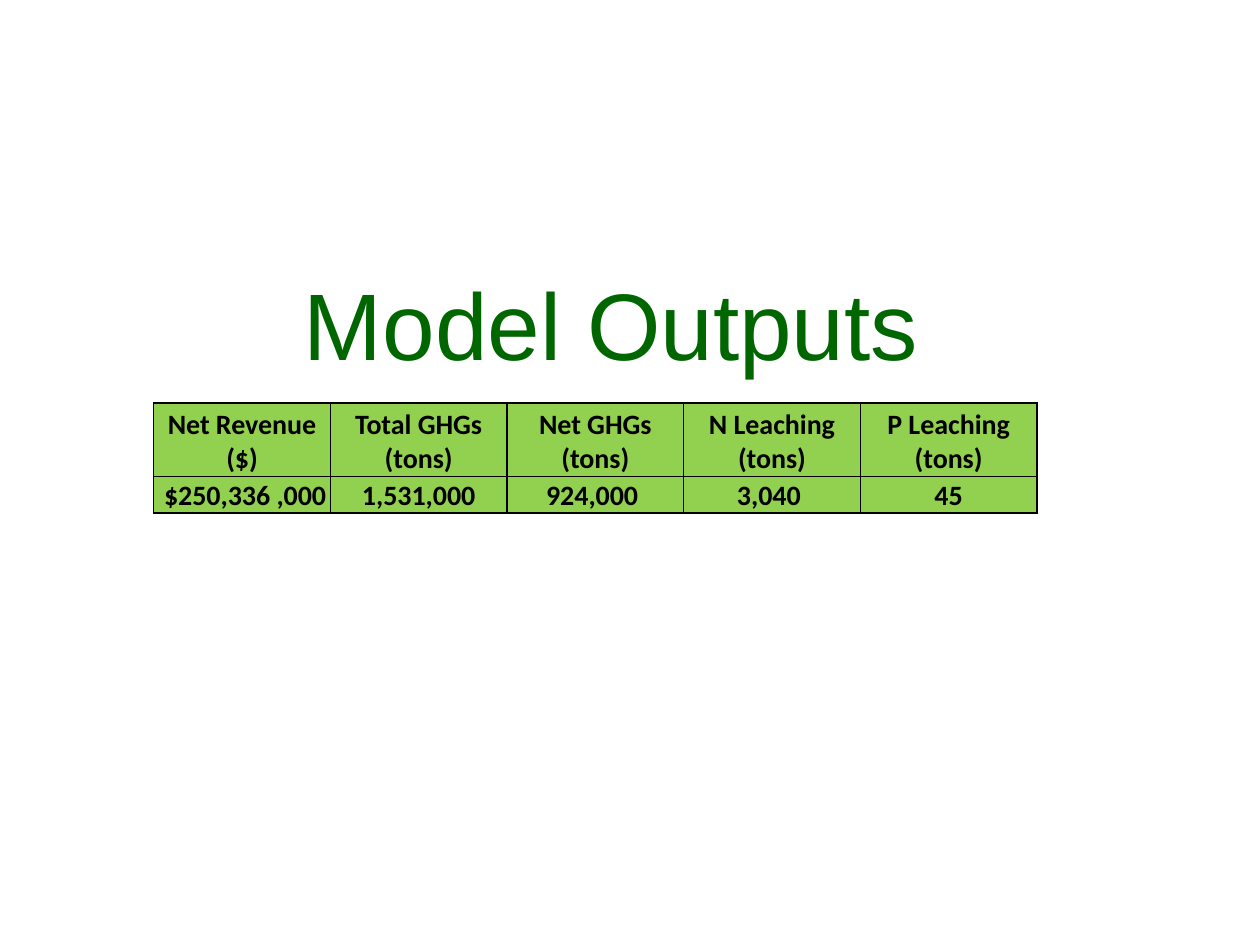
from lxml import etree
from pptx import Presentation
from pptx import util as u
from pptx.dml.color import RGBColor
from pptx.enum import text
from pptx.oxml import ns

WIDTH, HEIGHT = 10, 7.5
OUTPUTS = [
    ["Net Revenue ($)", "Total GHGs (tons)", "Net GHGs (tons)",
     "N Leaching (tons)", "P Leaching (tons)"],
    [" $250,336 ,000", "1,531,000", "924,000 ", "3,040 ", "45"],
]


def colour(code):
    return RGBColor.from_string(code)


class OutputsPage:
    title_font, title_size, title_colour = "Arial", 54, "006600"
    table_font, table_size, table_colour = "Calibri", 16, "000000"
    fill, border, border_width = "92D050", "000000", 1

    def __init__(self, deck):
        self.deck = deck
        self.page = deck.slides.add_slide(deck.slide_layouts[5])

    def area(self, left, top, width, height):
        """Turn shares of the slide's size into lengths."""
        across, down = self.deck.slide_width, self.deck.slide_height
        return (u.Emu(round(left * across)), u.Emu(round(top * down)),
                u.Emu(round(width * across)), u.Emu(round(height * down)))

    def add_words(self, frame, words, font, size, code, bold=False):
        para = frame.paragraphs[0]
        para.alignment = text.PP_ALIGN.CENTER
        span = para.add_run()
        span.text = words
        span.font.name, span.font.size = font, u.Pt(size)
        span.font.bold = bold
        span.font.color.rgb = colour(code)

    def title(self, words, area):
        box = self.page.shapes.title
        box.left, box.top, box.width, box.height = self.area(*area)
        box.text_frame.vertical_anchor = text.MSO_ANCHOR.MIDDLE
        self.add_words(box.text_frame, words, self.title_font,
                       self.title_size, self.title_colour)

    def outline(self, cell):
        properties = cell._tc.get_or_add_tcPr()
        for side in ("L", "R", "T", "B"):
            line = etree.SubElement(properties, ns.qn("a:ln" + side),
                                    w=str(u.Pt(self.border_width)))
            solid = etree.SubElement(line, ns.qn("a:solidFill"))
            etree.SubElement(solid, ns.qn("a:srgbClr"), val=self.border)

    def cell(self, cell, words, inset):
        self.outline(cell)
        cell.fill.solid()
        cell.fill.fore_color.rgb = colour(self.fill)
        cell.margin_left = cell.margin_right = cell.margin_top = u.Inches(inset)
        cell.margin_bottom = 0
        cell.vertical_anchor = text.MSO_ANCHOR.BOTTOM
        self.add_words(cell.text_frame, words, self.table_font,
                       self.table_size, self.table_colour, bold=True)

    def table(self, rows, area, row_shares, insets):
        left, top, width, height = self.area(*area)
        columns = len(rows[0])
        table = self.page.shapes.add_table(
            len(rows), columns, left, top, width, height).table
        for column in table.columns:
            column.width = width // columns
        for r, words_in_row in enumerate(rows):
            table.rows[r].height = round(height * row_shares[r])
            for c, words in enumerate(words_in_row):
                self.cell(table.cell(r, c), words, insets[r])


def main():
    deck = Presentation()
    deck.slide_width, deck.slide_height = u.Inches(WIDTH), u.Inches(HEIGHT)
    page = OutputsPage(deck)
    page.title("Model Outputs", (0.35 / WIDTH, 1.94 / HEIGHT, 0.9, 1.25 / HEIGHT))
    page.table(OUTPUTS, (1.22 / WIDTH, 3.2 / HEIGHT, 7.01 / WIDTH, 0.87 / HEIGHT),
               row_shares=(2 / 3, 1 / 3), insets=(0, 0.01))
    deck.save("out.pptx")


if __name__ == "__main__":
    main()
